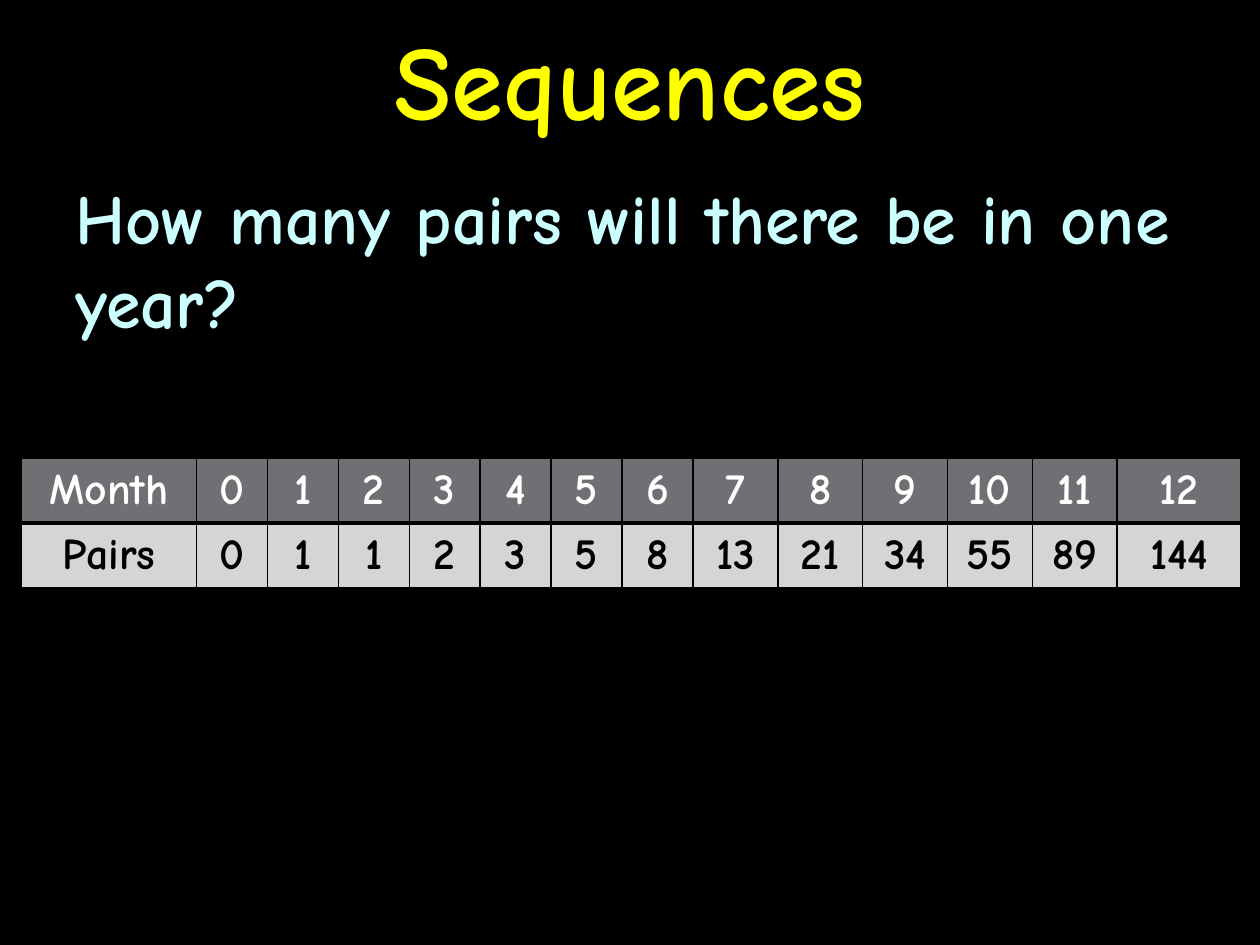
from lxml import etree
from pptx import Presentation
from pptx.dml.color import RGBColor
from pptx.enum.text import MSO_ANCHOR, PP_ALIGN
from pptx.oxml.ns import qn
from pptx.util import Cm, Pt

LEFT, CENTER = PP_ALIGN.LEFT, PP_ALIGN.CENTER
TOP, MIDDLE = MSO_ANCHOR.TOP, MSO_ANCHOR.MIDDLE
BLACK, WHITE, YELLOW, PALE_CYAN = "000000", "FFFFFF", "FFFF00", "CCFFFF"
HEADER_FILL, BODY_FILL = "6F6F74", "D5D5D6"


def rgb(value):
    return RGBColor.from_string(value)


def fibonacci(count):
    values = [0, 1]
    while len(values) < count:
        values.append(values[-1] + values[-2])
    return values


class SlideBuilder:
    font = "Comic Neue"

    def __init__(self, prs, background):
        self.s = prs.slides.add_slide(prs.slide_layouts[6])
        fill = self.s.background.fill
        fill.solid()
        fill.fore_color.rgb = rgb(background)

    def paragraph(self, tf, text, size, color, align):
        p = tf.paragraphs[0]
        p.text = str(text)
        p.alignment = align
        p.font.name = self.font
        p.font.size = Pt(size)
        p.font.bold = True
        p.font.color.rgb = rgb(color)
        return p

    def text(self, text, box, size, color, align=LEFT, anchor=TOP, before=0):
        sp = self.s.shapes.add_textbox(*[Cm(v) for v in box])
        tf = sp.text_frame
        tf.word_wrap = True
        tf.vertical_anchor = anchor
        p = self.paragraph(tf, text, size, color, align)
        p.space_before = Pt(before)

    def border(self, cell, side, width, color):
        ln = etree.SubElement(cell._tc.get_or_add_tcPr(), qn("a:" + side), w=str(Pt(width)))
        fill = etree.SubElement(ln, qn("a:solidFill"))
        etree.SubElement(fill, qn("a:srgbClr"), val=color)

    def table(self, rows, left, top, widths, row_height, size, styles):
        table = self.s.shapes.add_table(
            len(rows), len(widths), Cm(left), Cm(top),
            Cm(sum(widths)), Cm(row_height * len(rows))).table
        for column, width in zip(table.columns, widths):
            column.width = Cm(width)
        for i, (values, (fill, color, borders)) in enumerate(zip(rows, styles)):
            table.rows[i].height = Cm(row_height)
            for j, value in enumerate(values):
                cell = table.cell(i, j)
                cell.vertical_anchor = MIDDLE
                for side, width in borders.items():
                    self.border(cell, side, width, BLACK)
                cell.fill.solid()
                cell.fill.fore_color.rgb = rgb(fill)
                self.paragraph(cell.text_frame, value, size, color, CENTER)


def main():
    prs = Presentation()
    prs.slide_width, prs.slide_height = Cm(25.4), Cm(19.05)
    slide = SlideBuilder(prs, BLACK)
    slide.text("How many pairs will there be in one year?",
               (1.27, 3.39, 22.86, 15.66), 40, PALE_CYAN, before=8)
    slide.text("Sequences", (0, 0, 25.4, 3.18), 60, YELLOW, CENTER, MIDDLE)
    months = list(range(13))
    slide.table(
        [["Month"] + months, ["Pairs"] + fibonacci(len(months))],
        0.43, 9.23, [3.53] + [1.43] * 7 + [1.71] * 5 + [2.5], 1.25, 25,
        [(HEADER_FILL, WHITE, {"lnL": 1, "lnR": 1, "lnT": 1, "lnB": 3}),
         (BODY_FILL, BLACK, {"lnL": 1, "lnR": 1, "lnT": 3, "lnB": 1})])
    prs.save("out.pptx")


if __name__ == "__main__":
    main()
